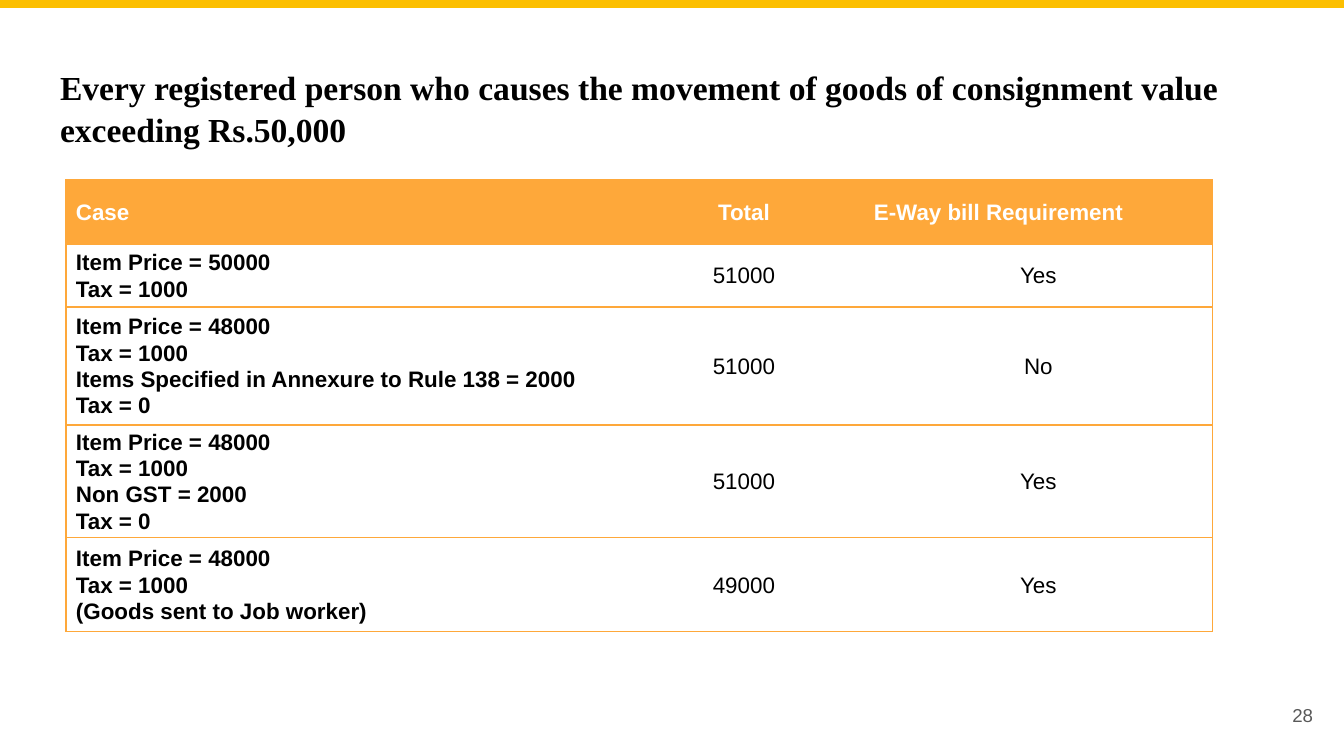
from lxml.etree import SubElement
from pptx import Presentation
from pptx.dml.color import RGBColor
from pptx.enum.shapes import MSO_SHAPE
from pptx.enum.text import MSO_ANCHOR, PP_ALIGN
from pptx.oxml.ns import qn
from pptx.util import Pt

WHITE = RGBColor(0xFF, 0xFF, 0xFF)
BLACK = RGBColor(0, 0, 0)
GREY = RGBColor(0x59, 0x59, 0x59)
GOLD = RGBColor(0xFC, 0xBF, 0x01)
ORANGE = RGBColor(0xFE, 0xA8, 0x3A)
LEFT, MID, RIGHT = PP_ALIGN.LEFT, PP_ALIGN.CENTER, PP_ALIGN.RIGHT


def px(n):
    return round(n * 914400 / 134.4)


class Deck:
    sans, serif = "Arial", "Times New Roman"
    pad = 13

    def __init__(self, wide, high):
        self.prs = Presentation()
        self.prs.slide_width, self.prs.slide_height = px(wide), px(high)
        self.slide = self.prs.slides.add_slide(self.prs.slide_layouts[6])

    def lines(self, frame, words, size, color, bold=False, align=LEFT,
              font=sans, space=None):
        frame.word_wrap = True
        for i, line in enumerate(words.split("\n")):
            para = frame.paragraphs[0] if i == 0 else frame.add_paragraph()
            para.text = line
            para.alignment, para.line_spacing = align, space
            para.font.name, para.font.size = font, Pt(size)
            para.font.bold, para.font.color.rgb = bold, color

    def text(self, box, words, size, color, anchor=MSO_ANCHOR.TOP, **style):
        frame = self.slide.shapes.add_textbox(*map(px, box)).text_frame
        frame.margin_left = frame.margin_right = px(self.pad)
        frame.margin_top = frame.margin_bottom = px(self.pad)
        frame.vertical_anchor = anchor
        self.lines(frame, words, size, color, **style)

    def bar(self, box, color):
        bar = self.slide.shapes.add_shape(MSO_SHAPE.RECTANGLE, *map(px, box))
        bar.shadow.inherit = False
        bar.fill.solid()
        bar.fill.fore_color.rgb = color
        bar.line.fill.background()

    def edge(self, cell, side, color):
        line = SubElement(cell._tc.get_or_add_tcPr(), qn("a:ln" + side),
                          w=str(Pt(0.75)))
        if color is None:
            SubElement(line, qn("a:noFill"))
        else:
            fill = SubElement(line, qn("a:solidFill"))
            SubElement(fill, qn("a:srgbClr"), val=str(color))

    def table(self, left, top, cols, rows, data):
        box = (left, top, sum(cols), sum(rows))
        table = self.slide.shapes.add_table(
            len(rows), len(cols), *map(px, box)).table
        table.horz_banding = False
        for col, wide in zip(table.columns, cols):
            col.width = px(wide)
        for row, high in zip(table.rows, rows):
            row.height = px(high)
        last = len(cols) - 1
        for r, line in enumerate(data):
            for c, words in enumerate(line):
                cell = table.cell(r, c)
                # Outer frame and row rules, no inner column rules
                self.edge(cell, "L", ORANGE if c == 0 else None)
                self.edge(cell, "R", ORANGE if c == last else None)
                self.edge(cell, "T", ORANGE)
                self.edge(cell, "B", ORANGE)
                cell.fill.solid()
                cell.fill.fore_color.rgb = WHITE if r else ORANGE
                cell.margin_left = cell.margin_right = px(10)
                cell.margin_top = cell.margin_bottom = 0
                cell.vertical_anchor = MSO_ANCHOR.MIDDLE
                start = c == 0 or (r == 0 and c == last)
                self.lines(cell.text_frame, words, 12,
                           BLACK if r else WHITE, bold=r == 0 or c == 0,
                           align=LEFT if start else MID, space=1.05)


def main():
    deck = Deck(1344, 756)

    # Title
    deck.text((47, 52, 1258, 85),
              "Every registered person who causes the movement of goods of "
              "consignment value exceeding Rs.50,000",
              18, BLACK, bold=True, font=deck.serif, space=1.05)

    # Cases
    deck.table(66, 180, (558, 240, 349), (64, 63, 118, 106, 94), [
        ("Case", "Total", "E-Way bill Requirement"),
        ("Item Price = 50000\nTax = 1000", "51000", "Yes"),
        ("Item Price = 48000\nTax = 1000\n"
         "Items Specified in Annexure to Rule 138 = 2000\nTax = 0",
         "51000", "No"),
        ("Item Price = 48000\nTax = 1000\nNon GST = 2000\nTax = 0",
         "51000", "Yes"),
        ("Item Price = 48000\nTax = 1000\n(Goods sent to Job worker)",
         "49000", "Yes"),
    ])

    # Top bar and page number
    deck.bar((0, -5, 1344, 13), GOLD)
    deck.text((1246, 686, 80, 58), "28", 10, GREY,
              anchor=MSO_ANCHOR.MIDDLE, align=RIGHT)

    deck.prs.save("out.pptx")


if __name__ == "__main__":
    main()
